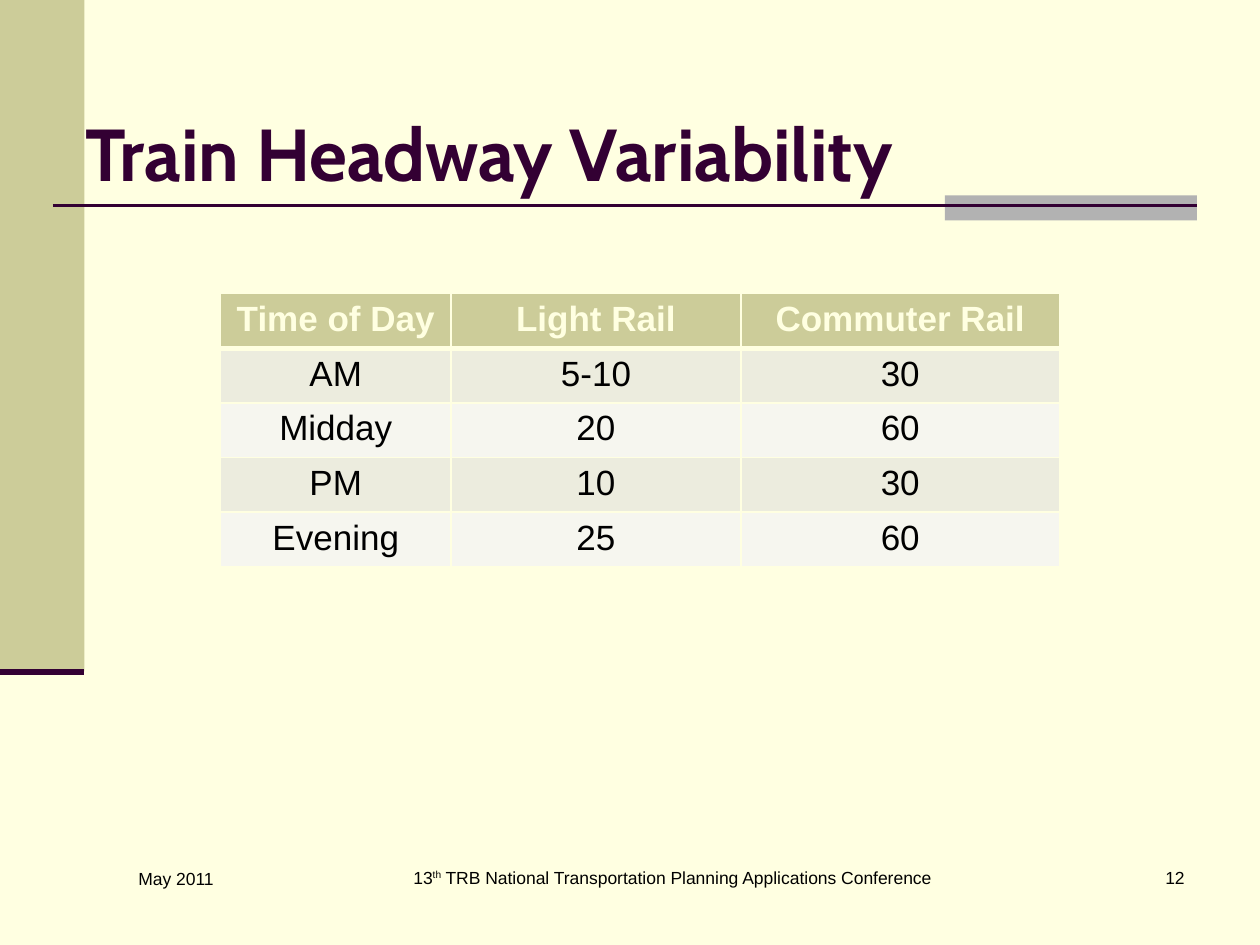
from lxml import etree
from pptx import Presentation
from pptx.dml.color import RGBColor
from pptx.enum.shapes import MSO_CONNECTOR, MSO_SHAPE
from pptx.enum.text import MSO_ANCHOR as Anchor, PP_ALIGN as Align
from pptx.oxml.ns import qn
from pptx.util import Inches, Pt

CREAM = RGBColor(0xFF, 0xFF, 0xE1)
KHAKI = RGBColor(0xCC, 0xCC, 0x99)
GRAY = RGBColor(0xB2, 0xB2, 0xB2)
PLUM = RGBColor(0x33, 0x00, 0x33)
BLACK = RGBColor(0x00, 0x00, 0x00)
ROW_FILLS = [RGBColor(0xEC, 0xEC, 0xDE), RGBColor(0xF6, 0xF6, 0xEF)]


def add_run(para, text, size, color, name="Arial", bold=False):
    span = para.add_run()
    span.text = text
    font_format = {"name": name, "size": Pt(size), "bold": bold}
    for attribute, value in font_format.items():
        setattr(span.font, attribute, value)
    span.font.color.rgb = color
    return span


def add_border(cell, side, width):
    """Draw a cream line on one side (L, R, T or B); call before setting the cell fill."""
    line = etree.SubElement(cell._tc.get_or_add_tcPr(), qn(f"a:ln{side}"), w=str(Pt(width)))
    fill = etree.SubElement(line, qn("a:solidFill"))
    etree.SubElement(fill, qn("a:srgbClr"), val=str(CREAM))


deck = Presentation()
deck.slide_width, deck.slide_height = Inches(10), Inches(7.5)
page = deck.slides.add_slide(deck.slide_layouts[6])
page.background.fill.solid()
page.background.fill.fore_color.rgb = CREAM

# Side band and title accent
for left, top, width, height, color in [
    (0, 0, 0.67, 5.33, KHAKI),
    (7.5, 1.55, 2, 0.2, GRAY),
]:
    block = page.shapes.add_shape(
        MSO_SHAPE.RECTANGLE, Inches(left), Inches(top), Inches(width), Inches(height)
    )
    block.shadow.inherit = False
    block.fill.solid()
    block.fill.fore_color.rgb = color
    block.line.fill.background()

# Rules below the title and the side band
for start, end, y, weight in [(0.42, 9.5, 1.63, 1.5), (0, 0.67, 5.33, 3.5)]:
    rule = page.shapes.add_connector(
        MSO_CONNECTOR.STRAIGHT, Inches(start), Inches(y), Inches(end), Inches(y)
    )
    rule.line.color.rgb = PLUM
    rule.line.width = Pt(weight)
    etree.SubElement(rule._element.spPr, qn("a:effectLst"))

# Title and footer
title_style = {"size": 42, "color": PLUM, "name": "Cabin", "bold": True}
footer_style = {"size": 10, "color": BLACK}
footer_parts = ["13", "th", " TRB National Transportation Planning Applications Conference"]
for left, top, width, height, anchor, align, style, parts in [
    (0.58, 0.58, 8.5, 1.25, Anchor.MIDDLE, Align.LEFT, title_style, ["Train Headway Variability"]),
    (1, 6.84, 2.17, 0.5, Anchor.TOP, Align.LEFT, footer_style, ["May 2011"]),
    (1.42, 6.83, 7.83, 0.5, Anchor.TOP, Align.CENTER, footer_style, footer_parts),
    (7.42, 6.83, 2.08, 0.5, Anchor.TOP, Align.RIGHT, footer_style, ["12"]),
]:
    box = page.shapes.add_textbox(Inches(left), Inches(top), Inches(width), Inches(height))
    frame = box.text_frame
    frame.word_wrap = True
    frame.vertical_anchor = anchor
    para = frame.paragraphs[0]
    para.alignment = align
    for part in parts:
        span = add_run(para, part, **style)
        if part == "th":
            span.font._element.set("baseline", "30000")

# Headway table
headways = [
    ("Time of Day", "Light Rail", "Commuter Rail"),
    ("AM", "5-10", "30"),
    ("Midday", "20", "60"),
    ("PM", "10", "30"),
    ("Evening", "25", "60"),
]
column_widths = [1.83, 2.3, 2.53]
row_height = 0.41
table = page.shapes.add_table(
    len(headways), len(column_widths), Inches(1.75), Inches(2.33),
    Inches(sum(column_widths)), Inches(row_height * len(headways)),
).table
for column, width in zip(table.columns, column_widths):
    column.width = Inches(width)
for row_index, values in enumerate(headways):
    table.rows[row_index].height = Inches(row_height)
    is_header = row_index == 0
    for column_index, value in enumerate(values):
        cell = table.cell(row_index, column_index)
        for side in "LRTB":
            heavy = (side == "B" and is_header) or (side == "T" and row_index == 1)
            add_border(cell, side, 3 if heavy else 1)
        cell.fill.solid()
        cell.fill.fore_color.rgb = KHAKI if is_header else ROW_FILLS[(row_index - 1) % 2]
        para = cell.text_frame.paragraphs[0]
        para.alignment = Align.CENTER
        add_run(para, value, 20, CREAM if is_header else BLACK, bold=is_header)

deck.save("out.pptx")
